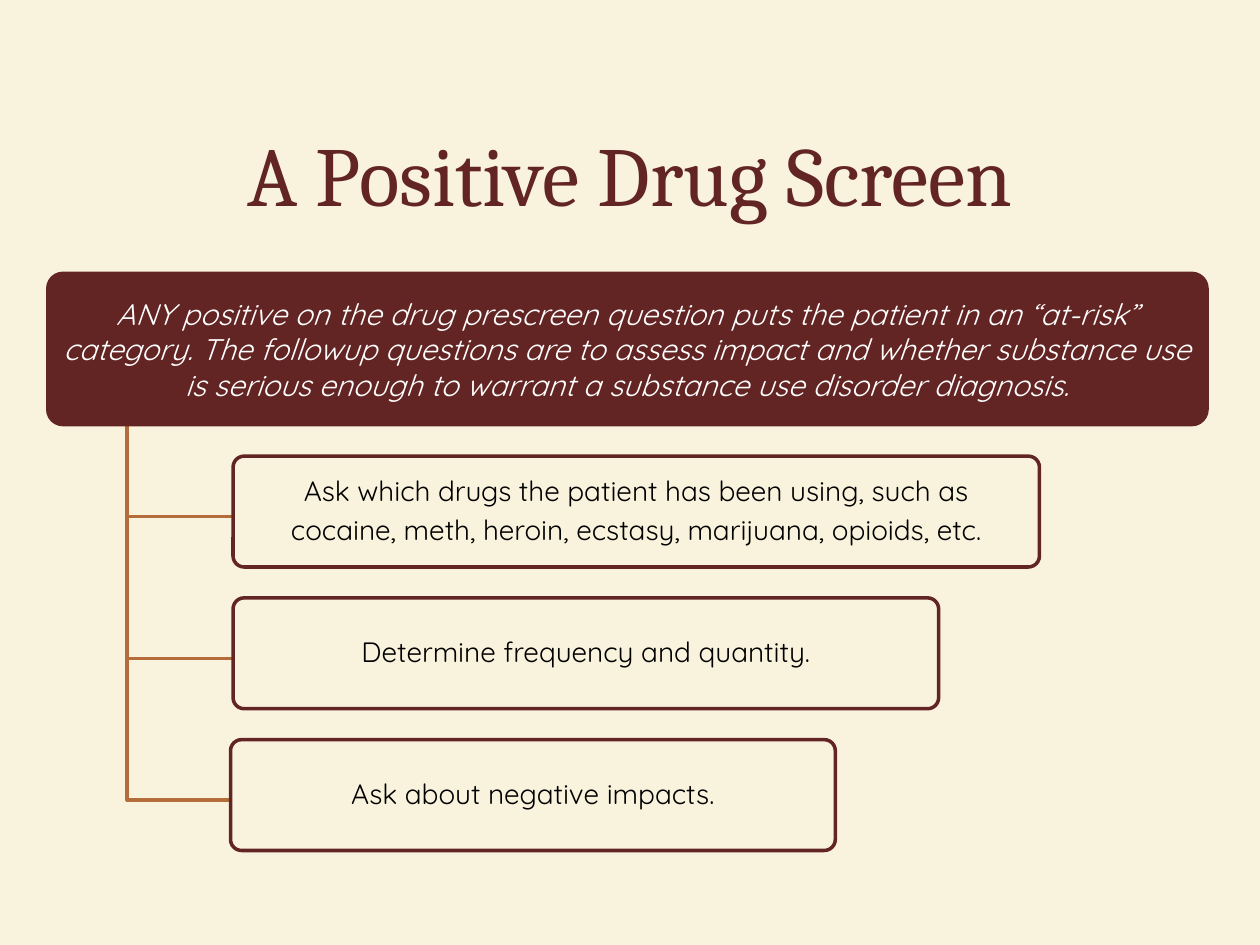
"""Build the slide on following up a positive drug screen."""
import dataclasses
import typing

import pptx
import pptx.dml.color
import pptx.enum.shapes
import pptx.enum.text
import pptx.util

Inches = pptx.util.Inches
Pt = pptx.util.Pt
RGBColor = pptx.dml.color.RGBColor

CREAM = RGBColor(0xF9, 0xF3, 0xDD)
MAROON = RGBColor(0x63, 0x25, 0x23)
COPPER = RGBColor(0xB4, 0x6C, 0x3A)
BLACK = RGBColor(0x00, 0x00, 0x00)
WHITE = RGBColor(0xFF, 0xFF, 0xFF)

STEM_X = 1.01
STEM_TOP = 3.12
FIRST_TOP = 3.62
STEP_PITCH = 1.125
STEP_HEIGHT = 0.88
BRANCH_OFFSET = 0.48

TITLE_FONT = {"name": "Cambria", "size": Pt(48)}
BANNER_FONT = {"name": "Quicksand", "size": Pt(17), "italic": True}
STEP_FONT = {"name": "Quicksand", "size": Pt(16)}
BANNER_PARAGRAPH = {}
STEP_PARAGRAPH = {"line_spacing": 0.9, "space_after": Pt(5)}


@dataclasses.dataclass
class Step:
    left: float
    width: float
    lines: list[str]


BANNER_TEXT = (
    "ANY positive on the drug prescreen question puts the patient in an “at-risk” "
    "category. The followup questions are to assess impact and whether substance use "
    "is serious enough to warrant a substance use disorder diagnosis."
)
STEPS = [
    Step(1.85, 6.4, [
        "Ask which drugs the patient has been using, such as",
        "cocaine, meth, heroin, ecstasy, marijuana, opioids, etc.",
    ]),
    Step(1.85, 5.6, ["Determine frequency and quantity."]),
    Step(1.83, 4.8, ["Ask about negative impacts."]),
]


def apply_format(target: typing.Any, values: dict[str, typing.Any]) -> None:
    """Set each named attribute on the target."""
    for name, value in values.items():
        setattr(target, name, value)


def write_text(shape, lines: list[str], font: dict, color: RGBColor,
               paragraph_format: dict, inset: float) -> None:
    """Fill a shape with centred paragraphs."""
    frame = shape.text_frame
    margins = {f"margin_{side}": Inches(inset) for side in ("left", "top", "right", "bottom")}
    apply_format(frame, {
        "text": "\n".join(lines),
        "word_wrap": True,
        "auto_size": pptx.enum.text.MSO_AUTO_SIZE.NONE,
        "vertical_anchor": pptx.enum.text.MSO_ANCHOR.MIDDLE,
        **margins,
    })
    for paragraph in frame.paragraphs:
        apply_format(paragraph, {"alignment": pptx.enum.text.PP_ALIGN.CENTER, **paragraph_format})
        apply_format(paragraph.font, font)
        paragraph.font.color.rgb = color


def outline(shape, color: RGBColor) -> None:
    """Give a shape a plain two-point line without a shadow."""
    shape.shadow.inherit = False
    shape.line.color.rgb = color
    shape.line.width = Pt(2)


def add_box(slide, left: float, top: float, width: float, height: float):
    """Add an unfilled rounded box with a maroon outline."""
    shape = slide.shapes.add_shape(
        pptx.enum.shapes.MSO_SHAPE.ROUNDED_RECTANGLE,
        Inches(left), Inches(top), Inches(width), Inches(height),
    )
    shape.adjustments[0] = 0.1
    shape.fill.background()
    outline(shape, MAROON)
    return shape


def add_branch(slide, end_x: float, end_y: float) -> None:
    """Draw the elbow line from the stem to a step."""
    builder = slide.shapes.build_freeform(Inches(STEM_X), Inches(STEM_TOP))
    builder.add_line_segments(
        [(Inches(STEM_X), Inches(end_y)), (Inches(end_x), Inches(end_y))], close=False
    )
    shape = builder.convert_to_shape()
    shape.fill.background()
    outline(shape, COPPER)


def add_step(slide, step: Step, top: float) -> None:
    """Draw one step with its branch."""
    add_branch(slide, step.left, top + BRANCH_OFFSET)
    shape = add_box(slide, step.left, top, step.width, STEP_HEIGHT)
    write_text(shape, step.lines, STEP_FONT, BLACK, STEP_PARAGRAPH, 0.04)


def main() -> None:
    """Create and save the presentation."""
    presentation = pptx.Presentation()
    apply_format(presentation, {"slide_width": Inches(10), "slide_height": Inches(7.5)})
    slide = presentation.slides.add_slide(presentation.slide_layouts[5])
    slide.background.fill.solid()
    slide.background.fill.fore_color.rgb = CREAM

    title = slide.shapes.title
    apply_format(title, {"left": Inches(0.17), "top": Inches(0.75),
                         "width": Inches(9.66), "height": Inches(1.25)})
    write_text(title, ["A Positive Drug Screen"], TITLE_FONT, MAROON, {}, 0.05)

    for index, step in enumerate(STEPS):
        add_step(slide, step, FIRST_TOP + index * STEP_PITCH)

    banner = add_box(slide, 0.38, 2.17, 9.2, 1.2)
    banner.fill.solid()
    banner.fill.fore_color.rgb = MAROON
    write_text(banner, [BANNER_TEXT], BANNER_FONT, WHITE, BANNER_PARAGRAPH, 0.04)

    presentation.save("out.pptx")


if __name__ == "__main__":
    main()
